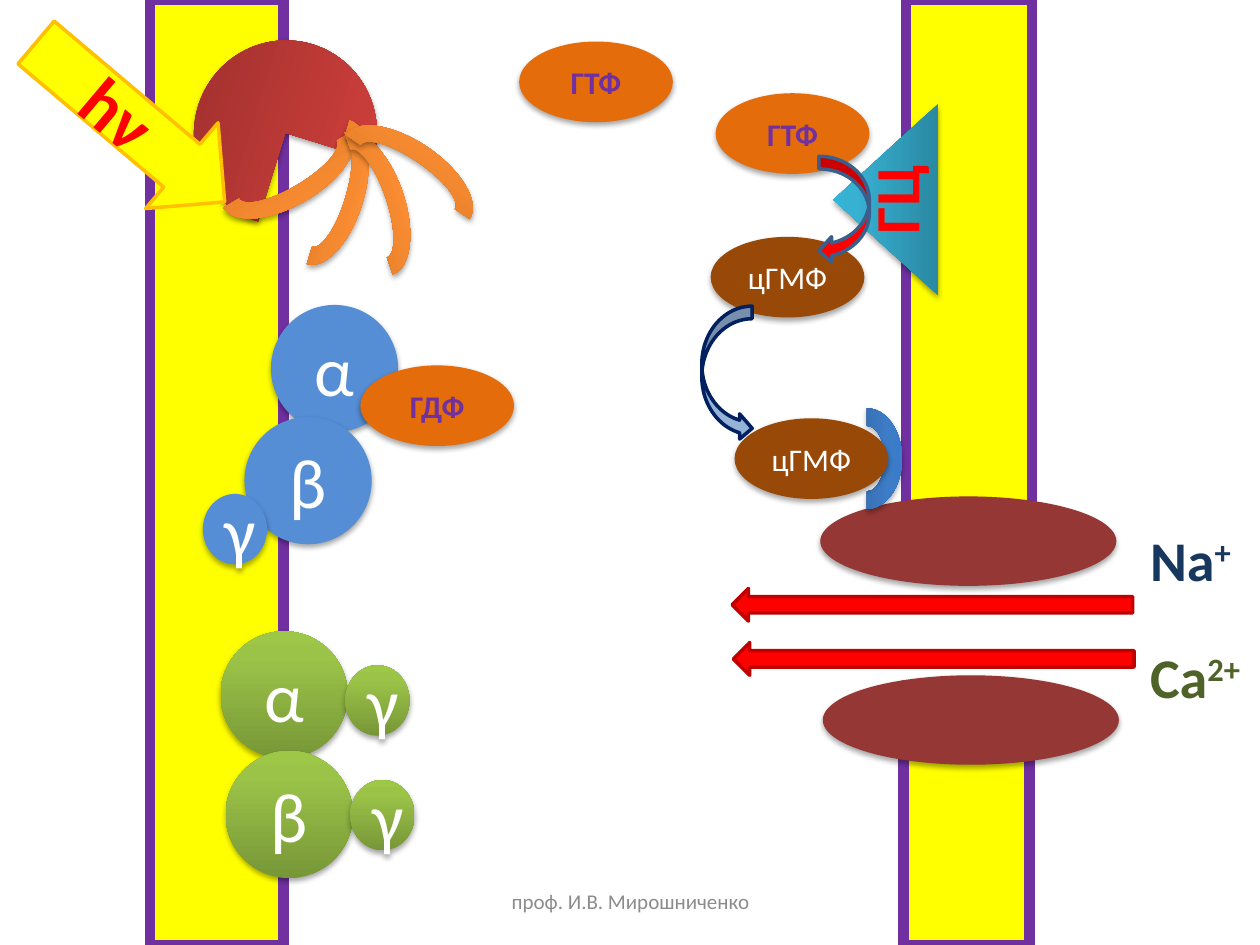
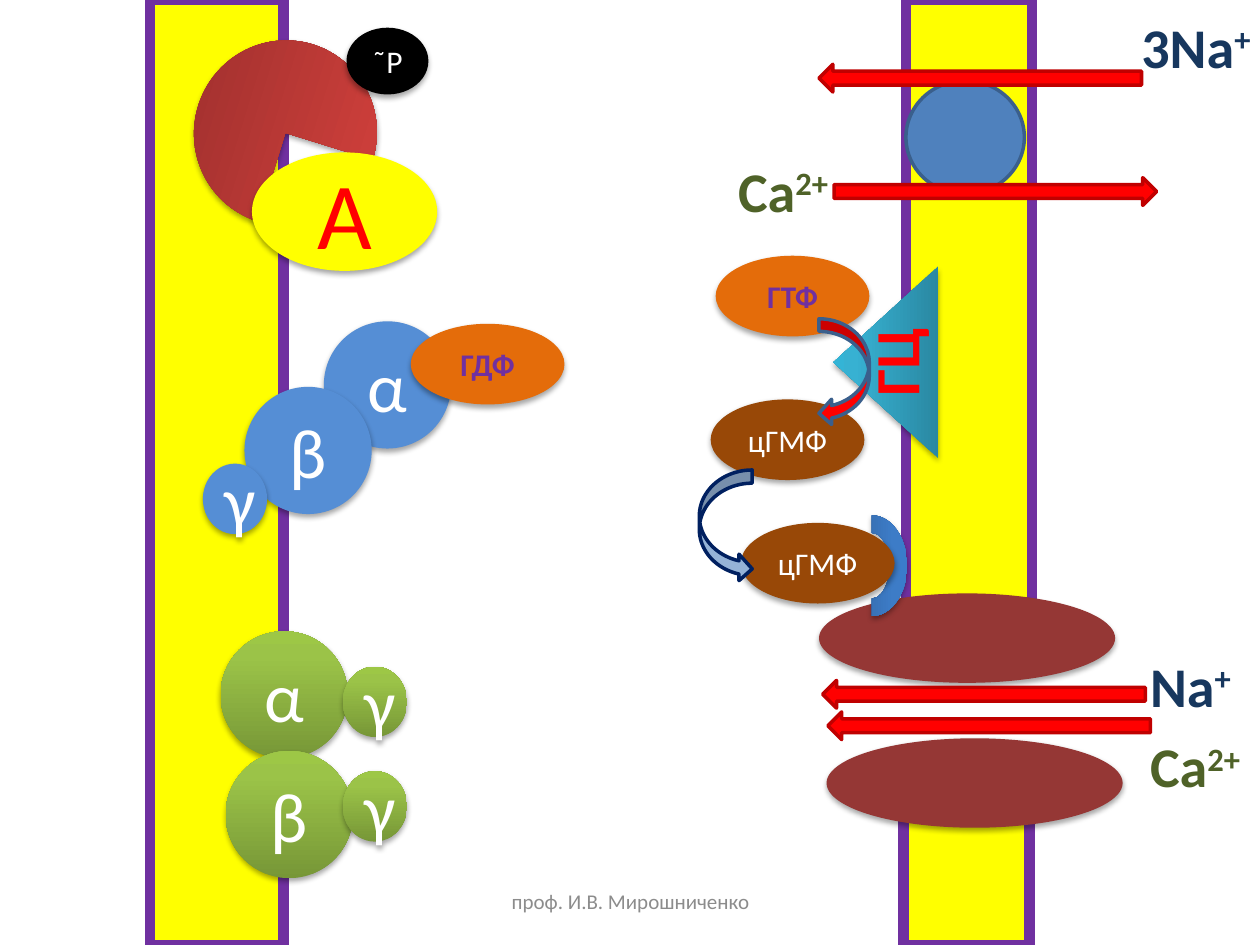
from pptx import Presentation
from pptx.dml.color import RGBColor as RGB
from pptx.enum.shapes import MSO_SHAPE as Kind
from pptx.enum.text import MSO_ANCHOR as Anchor, MSO_AUTO_SIZE as Auto, PP_ALIGN as Align
from pptx.oxml import parse_xml
from pptx.oxml.ns import nsdecls, qn
from pptx.util import Inches, Pt

FONT = "Calibri"
HUES = {
    "wall": "FFFF00", "edge": "7030A0", "pore": "953735", "red": "FF0000",
    "crimson": "C00000", "gold": "FFC000", "orange": "E46C0A", "brown": "984807",
    "blue": "558ED5", "pump": "4F81BD", "steel": "3A5F8C", "pale": "95B3D7",
    "navy": "002060", "sodium": "17375E", "calcium": "4F6228",
    "white": "FFFFFF", "black": "000000", "gray": "8C8C8C",
}
# Gradient stops at 0, 80 and 100 percent, from bottom to top
FADES = {
    "green": ("779737", "9BC348", "9DC746"),
    "ruby": ("9C2F2D", "CB3E3A", "CE3B37"),
    "amber": ("CC6E20", "FF9034", "FF9136"),
    "teal": ("2A88A2", "37B1D2", "34B4D6"),
    "azure": ("2F5F99", "3D7CC7", "3A7CCB"),
}


def hue(name):
    return RGB.from_string(HUES[name])


def fade(shape, name):
    shape.fill.gradient()
    shape.fill.gradient_angle = 90
    stops = shape.fill._fill._gradFill.find(qn("a:gsLst"))
    for old in list(stops):
        stops.remove(old)
    for spot, tone in zip((0, 80, 100), FADES[name]):
        stops.append(parse_xml(
            f'<a:gs {nsdecls("a")} pos="{spot * 1000}"><a:srgbClr val="{tone}"/></a:gs>'))


def shade(shape):
    effects = shape._element.spPr.find(qn("a:effectLst"))
    effects.append(parse_xml(
        f'<a:outerShdw {nsdecls("a")} blurRad="40000" dist="23000" dir="5400000" '
        'rotWithShape="0"><a:srgbClr val="000000"><a:alpha val="35000"/>'
        '</a:srgbClr></a:outerShdw>'))


def style(par, size, color, bold=False):
    font = par.font
    font.name, font.size, font.bold = FONT, Pt(size), bold
    font.color.rgb = hue(color)


def draw(slide, kind, box, fill, line=None, width=2, turn=0):
    """Outlined shapes are flat; shapes without a line cast a shadow."""
    shape = slide.shapes.add_shape(kind, *map(Inches, box))
    shape.rotation = turn
    shape.shadow.inherit = False
    if fill in FADES:
        fade(shape, fill)
    else:
        shape.fill.solid()
        shape.fill.fore_color.rgb = hue(fill)
    if line:
        shape.line.color.rgb = hue(line)
        shape.line.width = Pt(width)
    else:
        shape.line.fill.background()
        shade(shape)
    return shape


def write(shape, text, size, color="white", bold=False, anchor=Anchor.MIDDLE):
    frame = shape.text_frame
    frame.word_wrap = True
    frame.vertical_anchor = anchor
    par = frame.paragraphs[0]
    par.text, par.alignment = text, Align.CENTER
    style(par, size, color, bold)


def oval(slide, box, fill, text=None, size=18, color="white", bold=False):
    shape = draw(slide, Kind.OVAL, box, fill)
    if text:
        write(shape, text, size, color, bold)


def unit(slide, x, y, letter, fill):
    """One subunit of a G protein; gamma is the small one."""
    w, h = (0.51, 0.56) if letter == "γ" else (1.01, 1.01)
    oval(slide, (x, y, w, h), fill, letter, 40)


def guanyl(slide, x, y, text):
    oval(slide, (x, y, 1.22, 0.64), "orange", text, 18, "edge", True)


def cyclic(slide, x, y):
    oval(slide, (x, y, 1.22, 0.64), "brown", "цГМФ")


def flow(slide, x, y, w, h, kind=Kind.LEFT_ARROW):
    draw(slide, kind, (x, y, w, h), "red", "crimson")


def ion(slide, x, y, name, charge, color, w=0.97):
    box = slide.shapes.add_textbox(*map(Inches, (x, y, w, 0.64)))
    frame = box.text_frame
    frame.word_wrap = True
    frame.auto_size = Auto.SHAPE_TO_FIT_TEXT
    par = frame.paragraphs[0]
    par.add_run().text = name
    sup = par.add_run()
    sup.text = charge
    sup.font._element.set("baseline", "30000")
    style(par, 32, color, True)


def wall(slide, x, y, w, h):
    draw(slide, Kind.RECTANGLE, (x, y, w, h), "wall", "edge", 6)


def pore(slide, top, low, pores):
    """Right membrane, ending at top and resuming at low, with its channel."""
    wall(slide, 7.19, 0, 1, top)
    wall(slide, 7.17, low, 1, 7.5 - low)
    for x, y in pores:
        oval(slide, (x, y, 2.35, 0.71), "pore")


def disc(slide, gammas):
    """Left membrane with the resting G protein."""
    wall(slide, 1.19, 0, 1.06, 7.5)
    unit(slide, 1.75, 5.01, "α", "green")
    unit(slide, 1.79, 5.96, "β", "green")
    for x, y in gammas:
        unit(slide, x, y, "γ", "green")


def active(slide, alpha, beta, gdp):
    unit(slide, *alpha, "α", "blue")
    unit(slide, 1.94, beta, "β", "blue")
    unit(slide, 1.61, beta + 0.61, "γ", "blue")
    guanyl(slide, *gdp, "ГДФ")


def opsin(slide):
    draw(slide, Kind.PIE, (1.53, 0.33, 1.47, 1.45), "ruby", turn=107.2)


def cyclase(slide, top, dock, bound, curve):
    """GTP becomes cGMP, which then binds to the channel."""
    cyclic(slide, 5.64, top + 1.14)
    draw(slide, Kind.BLOCK_ARC, (*dock, 0.8, 0.56), "azure", turn=90)
    cyclic(slide, *bound)
    shape = draw(slide, Kind.ISOSCELES_TRIANGLE, (6.27, top + 0.43, 1.52, 0.83),
                 "teal", turn=270)
    write(shape, "ГЦ", 36, "red", True, Anchor.BOTTOM)
    guanyl(slide, 5.68, top, "ГТФ")
    draw(slide, Kind.CURVED_LEFT_ARROW, (6.5, top + 0.5, 0.4, 0.85), "red", "steel")
    draw(slide, Kind.CURVED_RIGHT_ARROW, curve, "pale", "navy")


def tail(slide, x, y, turn):
    draw(slide, Kind.BLOCK_ARC, (x, y, 1.19, 0.57), "amber", turn=turn)


def light(slide):
    shape = draw(slide, Kind.DOWN_ARROW, (0.59, -0.01, 0.89, 1.96), "wall", "gold",
                 turn=310.2)
    write(shape, "hν", 40, "red", True)
    shape.text_frame._txBody.bodyPr.set("vert", "vert")


def footer(slide):
    box = slide.shapes.add_textbox(*map(Inches, (3.42, 6.95, 3.17, 0.4)))
    write(box, "проф. И.В. Мирошниченко", 12, "gray")


def absorb(slide):
    # Channel and ions
    pore(slide, 4.57, 5.44, [(6.51, 3.94), (6.53, 5.36)])
    cyclase(slide, 0.74, (6.48, 3.36), (5.83, 3.32), (5.57, 2.43, 0.4, 1.07))
    flow(slide, 5.81, 4.67, 3.18, 0.26)
    flow(slide, 5.82, 5.1, 3.18, 0.26)
    ion(slide, 9.03, 4.12, "Nа", "+", "sodium")
    ion(slide, 9.03, 5.05, "Са", "2+", "calcium")
    # G proteins
    disc(slide, [(2.74, 5.28), (2.78, 6.19)])
    active(slide, (2.15, 2.42), 3.31, (2.86, 2.9))
    # Receptor, its tails and the light
    opsin(slide)
    tail(slide, 1.69, 1.06, 149.4)
    light(slide)
    for x, y, turn in [(2.01, 1.24, 106.6), (2.33, 1.33, 71.3), (2.64, 1.12, 34.2)]:
        tail(slide, x, y, turn)
    guanyl(slide, 4.12, 0.33, "ГТФ")
    footer(slide)


def restore(slide):
    # Channel and ions
    pore(slide, 5.11, 6.41, [(6.5, 4.71), (6.56, 5.86)])
    ion(slide, 9.03, 5.12, "Nа", "+", "sodium")
    ion(slide, 9.03, 5.76, "Са", "2+", "calcium")
    # G proteins and the blocked receptor
    disc(slide, [(2.72, 5.29), (2.72, 6.12)])
    active(slide, (2.57, 2.55), 3.07, (3.26, 2.57))
    opsin(slide)
    oval(slide, (2.75, 0.22, 0.65, 0.53), "black", "˜Р")
    oval(slide, (2, 1.21, 1.47, 0.94), "wall", "А", 54, "red")
    # Ion exchanger
    ion(slide, 8.96, 0.05, "3Nа", "+", "sodium", 1.14)
    draw(slide, Kind.OVAL, (7.19, 0.64, 0.94, 0.9), "pump", "steel")
    flow(slide, 6.5, 0.51, 2.56, 0.22)
    flow(slide, 6.62, 1.41, 2.56, 0.22, Kind.RIGHT_ARROW)
    ion(slide, 5.76, 1.19, "Са", "2+", "calcium")
    # Cyclase and the ion flow
    cyclase(slide, 2.03, (6.52, 4.21), (5.88, 4.15), (5.55, 3.73, 0.42, 0.89))
    flow(slide, 6.53, 5.4, 2.56, 0.22)
    flow(slide, 6.57, 5.65, 2.56, 0.22)
    footer(slide)


def main():
    deck = Presentation()
    deck.slide_width, deck.slide_height = Inches(10), Inches(7.5)
    blank = deck.slide_layouts[6]
    for build in (absorb, restore):
        build(deck.slides.add_slide(blank))
    deck.save("out.pptx")


if __name__ == "__main__":
    main()
